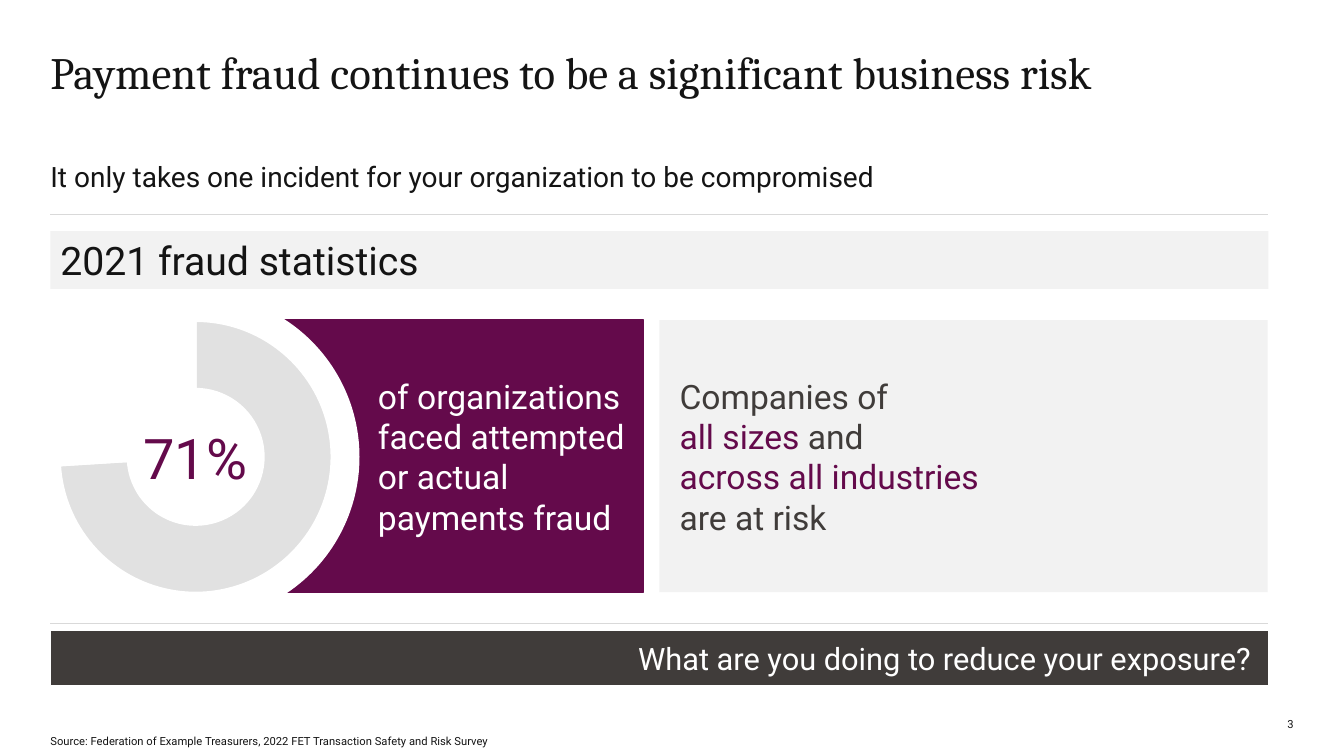
import pptx
import pptx.chart.data
import pptx.dml.color
import pptx.enum.chart
import pptx.enum.shapes
import pptx.enum.text
import pptx.util
from lxml import etree

# The grid has 160 columns and 90 rows of square cells, 12 to the inch
COLS, ROWS = 160, 90
CELL = pptx.util.Inches(1) / 12
LEFT, WIDE = 6, 145
PAD = (1.2, 0.6, 1.2, 0.6)
FLAT = (0, 0, 0, 0)

SANS, SERIF = "Roboto", "Cambria"
HUES = {"ink": "141414", "plum": "640A4B", "dark": "403C3A", "pale": "F2F2F2",
        "ring": "E1E1E1", "rule": "D9D9D9", "white": "FFFFFF"}
SHAPE = pptx.enum.shapes.MSO_SHAPE
ALIGN = pptx.enum.text.PP_ALIGN
TOP = pptx.enum.text.MSO_ANCHOR.TOP
MID = pptx.enum.text.MSO_ANCHOR.MIDDLE
BASE = pptx.enum.text.MSO_ANCHOR.BOTTOM


def hue(name):
    return pptx.dml.color.RGBColor.from_string(HUES[name])


def grid(*cells):
    return [round(n * CELL) for n in cells]


def style(font, size, tone, face=SANS):
    font.size = pptx.util.Pt(size)
    font.name = face
    font.color.rgb = hue(tone)


def frame(shape, pad=PAD, anchor=MID, wrap=True):
    """Set the insets, anchor and wrap of a shape's text."""
    text = shape.text_frame
    text.word_wrap = wrap
    text.vertical_anchor = anchor
    (text.margin_left, text.margin_top,
     text.margin_right, text.margin_bottom) = grid(*pad)
    return text


def write(shape, words, size, tone, face=SANS, align=ALIGN.LEFT, **opts):
    """Fill a shape with one paragraph in one style."""
    text = frame(shape, **opts)
    text.text = words
    para = text.paragraphs[0]
    para.alignment = align
    style(para.runs[0].font, size, tone, face)
    return para


def panel(slide, kind, box, fill, edge=None):
    shape = slide.shapes.add_shape(kind, *grid(*box))
    shape.shadow.inherit = False
    shape.fill.solid()
    shape.fill.fore_color.rgb = hue(fill)
    if edge:
        shape.line.color.rgb = hue(edge)
        shape.line.width = pptx.util.Pt(1)
    else:
        shape.line.fill.background()
    return shape


def label(slide, box, words, size, tone, **opts):
    return write(slide.shapes.add_textbox(*grid(*box)), words, size, tone, **opts)


def rule(slide, row):
    line = slide.shapes.add_connector(
        pptx.enum.shapes.MSO_CONNECTOR.STRAIGHT,
        *grid(LEFT, row, LEFT + WIDE, row))
    line.line.color.rgb = hue("rule")
    line.line.width = pptx.util.Pt(0.5)
    etree.SubElement(line._element.spPr, pptx.oxml.ns.qn("a:effectLst"))


def ring(slide, box):
    """Draw the doughnut with its second slice left clear."""
    data = pptx.chart.data.CategoryChartData()
    data.categories = ["1", "2"]
    data.add_series("Series 1", (74, 26))
    chart = slide.shapes.add_chart(
        pptx.enum.chart.XL_CHART_TYPE.DOUGHNUT, *grid(*box), data).chart
    chart.has_legend = False
    chart.has_title = False
    style(chart.font, 10, "ink")
    plot = chart.plots[0]
    plot.vary_by_categories = False
    first, rest = (plot.series[0].points[n].format for n in range(2))
    first.fill.solid()
    first.fill.fore_color.rgb = hue("ring")
    rest.fill.background()
    for part in (first, rest):
        part.line.color.rgb = hue("white")
        part.line.width = pptx.util.Pt(1.5)

    # Hole size and plot area
    qn = pptx.oxml.ns.qn
    area = chart._chartSpace.find(".//" + qn("c:plotArea"))
    area.find(".//" + qn("c:holeSize")).set("val", "70")
    for old in area.findall(qn("c:layout")):
        area.remove(old)
    lay = etree.Element(qn("c:layout"))
    area.insert(0, lay)
    man = etree.SubElement(lay, qn("c:manualLayout"))
    wide, high = 0.83, 0.91
    for tag, val in (("layoutTarget", "inner"), ("xMode", "edge"),
                     ("yMode", "edge"), ("x", (1 - wide) / 2),
                     ("y", (1 - high) / 2), ("w", wide), ("h", high)):
        etree.SubElement(man, qn("c:" + tag)).set("val", str(val))


def risk(slide, box):
    """Draw the pale panel with its two-tone lines."""
    text = frame(panel(slide, SHAPE.RECTANGLE, box, "pale"), (2.4, 0.6, 1.2, 0.6))
    para = text.paragraphs[0]
    para.alignment = ALIGN.LEFT
    lines = ([("Companies of ", "dark")],
             [("all sizes ", "plum"), ("and ", "dark")],
             [("across all industries ", "plum")],
             [("are at risk", "dark")])
    for n, line in enumerate(lines):
        if n:
            para.add_line_break()
        for words, tone in line:
            run = para.add_run()
            run.text = words
            style(run.font, 24, tone)


def main():
    deck = pptx.Presentation()
    deck.slide_width, deck.slide_height = grid(COLS, ROWS)
    slide = deck.slides.add_slide(deck.slide_layouts[5])

    # Title and subtitle
    title = slide.shapes.title
    title.left, title.top, title.width, title.height = grid(LEFT, 6, 148, 12)
    para = write(title, "Payment fraud continues to be a significant business risk",
                 32, "ink", SERIF, pad=FLAT, anchor=TOP)
    para.line_spacing = 0.9
    label(slide, (LEFT, 19, 104.3, 5.8),
          "It only takes one incident for your organization to be compromised",
          20, "ink", pad=FLAT, anchor=TOP, wrap=False)
    rule(slide, 25.5)

    # Heading band
    band = panel(slide, SHAPE.RECTANGLE, (LEFT, 27.5, WIDE, 6.9), "pale")
    write(band, "2021 fraud statistics", 28, "ink")

    # Share of organizations
    share = panel(slide, SHAPE.RECTANGLE, (23.4, 38.1, 53.2, 32.4), "plum", "plum")
    write(share, "of organizations faced attempted or actual payments fraud",
          24, "white", pad=(21.6, 0.6, 1.2, 0.6))
    panel(slide, SHAPE.OVAL, (3.8, 34.9, 39, 39), "white")
    ring(slide, (3.8, 36.6, 39, 35.6))
    label(slide, (12.8, 47, 20.9, 14.8), "71%", 40, "plum", align=ALIGN.CENTER)

    # Who is at risk
    risk(slide, (78.5, 38.1, 72.4, 32.4))

    # Closing question
    rule(slide, 74.2)
    close = panel(slide, SHAPE.RECTANGLE, (LEFT, 75.1, WIDE, 6.5), "dark", "white")
    write(close, "What are you doing to reduce your exposure? ", 22, "white",
          align=ALIGN.RIGHT)

    # Source and page number
    label(slide, (LEFT, 86.8, 99.6, 3.1),
          "Source: Federation of Example Treasurers, "
          "2022 FET Transaction Safety and Risk Survey",
          8, "ink", pad=(0, 0.6, 1.2, 0.6), anchor=TOP)
    label(slide, (148, 84, 6, 3), "3", 8, "ink", align=ALIGN.RIGHT,
          pad=FLAT, anchor=BASE)

    deck.save("out.pptx")


if __name__ == "__main__":
    main()
